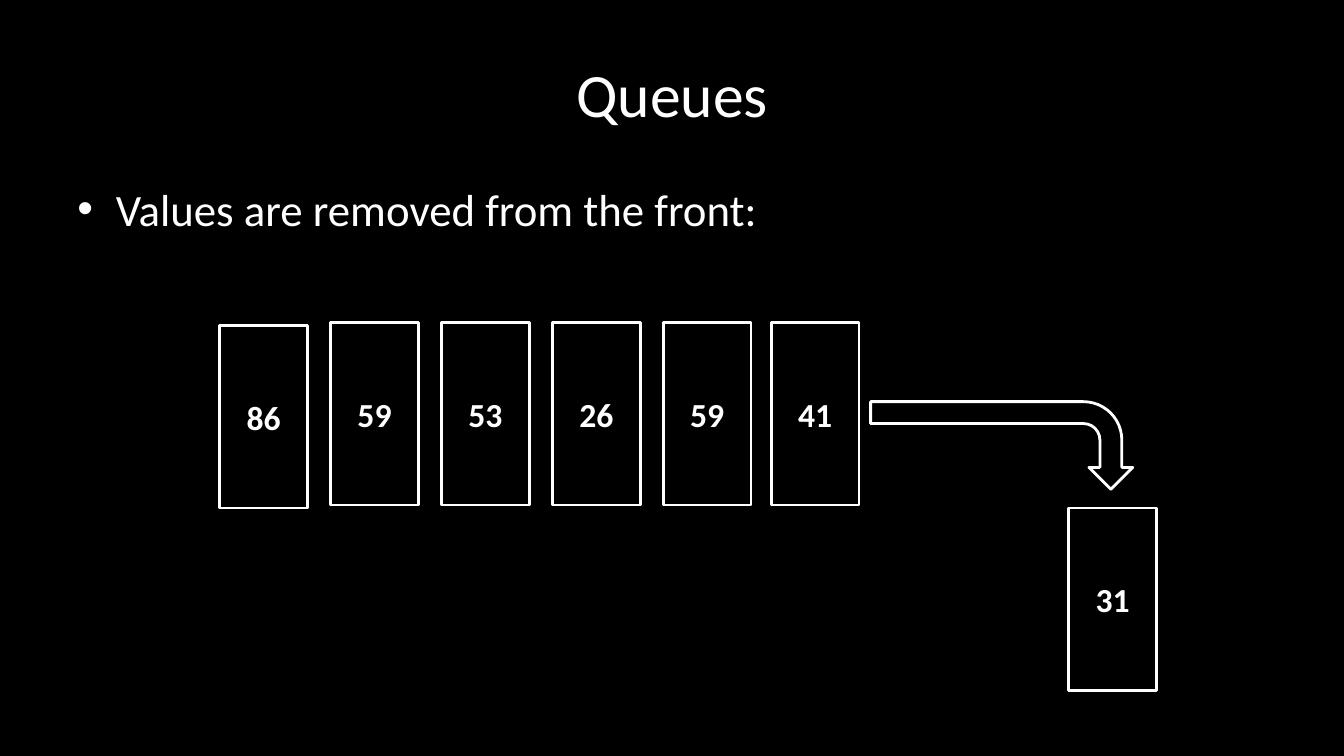
"""Draw a queue whose front value is being removed."""
from dataclasses import dataclass

import pptx
import pptx.dml.color
import pptx.enum.shapes
import pptx.enum.text
import pptx.oxml.ns
import pptx.util
from lxml import etree

PX = 9144
COLOURS = {"background": "000000", "ink": "FFFFFF"}
FONT = "Calibri"
CELL_WIDTH, CELL_HEIGHT = 87, 181
CELL_PITCH = 110
QUEUE_LEFT, QUEUE_TOP = 218, 320
BULLET_INDENT = 38


@dataclass(frozen=True)
class Cell:
    value: str
    left: int
    top: int = QUEUE_TOP


CELLS = [
    Cell("31", 1060, 504),
    Cell("41", 765),
    *(Cell(value, QUEUE_LEFT + CELL_PITCH * place)
      for place, value in [(4, "59"), (3, "26"), (2, "53"), (1, "59")]),
    Cell("86", QUEUE_LEFT, 323),
]


def px(length: int) -> pptx.util.Emu:
    return pptx.util.Emu(length * PX)


def colour(name: str) -> pptx.dml.color.RGBColor:
    return pptx.dml.color.RGBColor.from_string(COLOURS[name])


def add_bullet(para) -> None:
    properties = para._p.get_or_add_pPr()
    properties.set("marL", str(px(BULLET_INDENT)))
    properties.set("indent", str(px(-BULLET_INDENT)))
    for tag, key, value in [("a:buFont", "typeface", "Arial"), ("a:buChar", "char", "•")]:
        etree.SubElement(properties, pptx.oxml.ns.qn(tag)).set(key, value)


def write(box, text: str, *, size: int, bold: bool = False, centred: bool = True,
          bullet: bool = False) -> None:
    frame = box.text_frame
    frame.word_wrap = True
    anchors = pptx.enum.text.MSO_ANCHOR
    frame.vertical_anchor = anchors.MIDDLE if centred else anchors.TOP
    para = frame.paragraphs[0]
    alignments = pptx.enum.text.PP_ALIGN
    para.alignment = alignments.CENTER if centred else alignments.LEFT
    if bullet:
        add_bullet(para)
    span = para.add_run()
    span.text = text
    span.font.name = FONT
    span.font.size = pptx.util.Pt(size)
    span.font.bold = bold
    span.font.color.rgb = colour("ink")


def add_text(page, left: int, top: int, width: int, height: int):
    return page.shapes.add_textbox(px(left), px(top), px(width), px(height))


def add_outline(page, kind, left: int, top: int, width: int, height: int):
    shape = page.shapes.add_shape(kind, px(left), px(top), px(width), px(height))
    shape.shadow.inherit = False
    shape.fill.background()
    shape.line.color.rgb = colour("ink")
    shape.line.width = pptx.util.Pt(2)
    return shape


def main() -> None:
    deck = pptx.Presentation()
    deck.slide_width, deck.slide_height = px(1333), px(750)
    page = deck.slides.add_slide(deck.slide_layouts[6])
    page.background.fill.solid()
    page.background.fill.fore_color.rgb = colour("background")

    write(add_text(page, 67, 30, 1200, 125), "Queues", size=44)
    write(add_text(page, 67, 175, 1200, 495), "Values are removed from the front:",
          size=32, centred=False, bullet=True)

    shapes = pptx.enum.shapes.MSO_SHAPE
    for cell in CELLS:
        box = add_outline(page, shapes.RECTANGLE, cell.left, cell.top, CELL_WIDTH, CELL_HEIGHT)
        write(box, cell.value, size=24, bold=True)

    removal_arrow = add_outline(page, shapes.BENT_ARROW, 950, 312, 87, 260)
    removal_arrow.rotation = 90
    deck.save("out.pptx")


if __name__ == "__main__":
    main()
